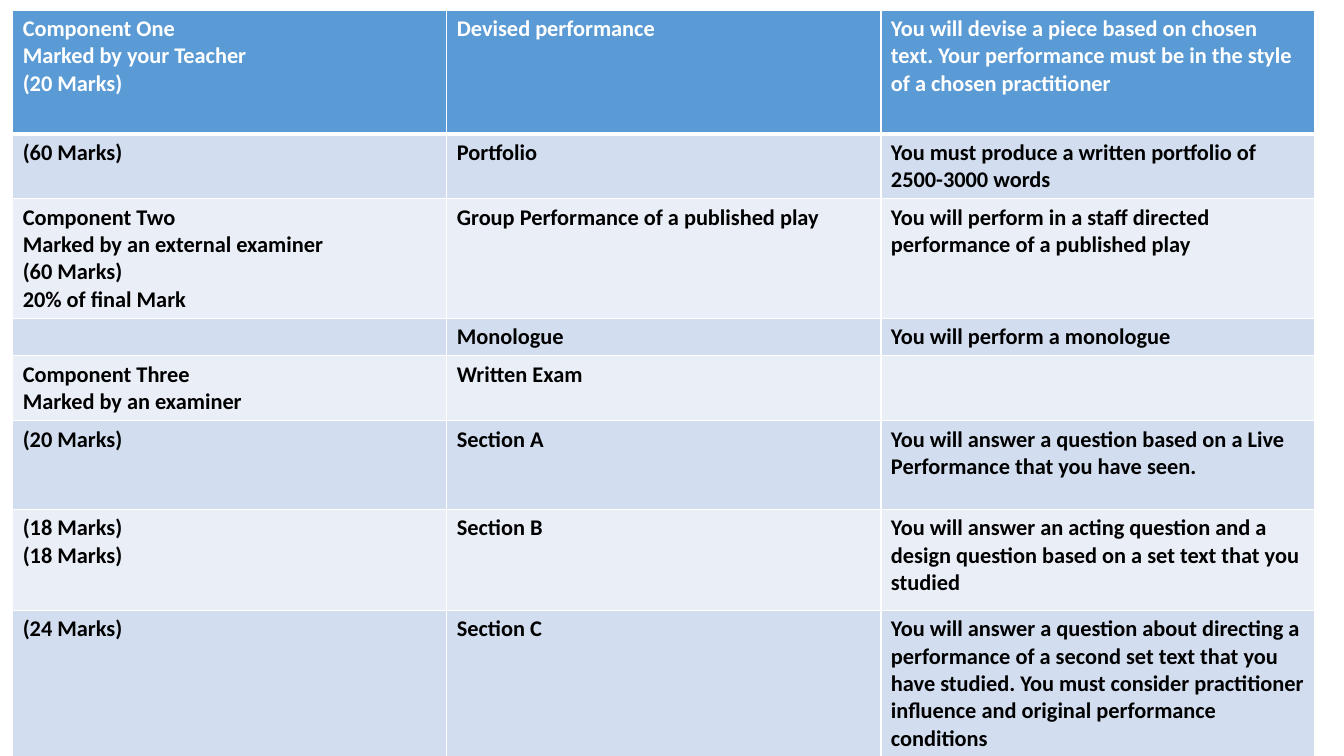
from lxml import etree
from pptx import Presentation
from pptx.dml.color import RGBColor
from pptx.oxml.ns import qn
from pptx.util import Cm, Pt

WHITE = RGBColor(0xFF, 0xFF, 0xFF)
BLACK = RGBColor(0, 0, 0)
HEADER_BLUE = RGBColor(0x5B, 0x9B, 0xD5)
DARK_BAND = RGBColor(0xD2, 0xDE, 0xEF)
LIGHT_BAND = RGBColor(0xEA, 0xEF, 0xF7)
TEXT_SIZE = Pt(16)
COLUMN_WIDTH = Cm(10.94)

COMPONENTS = [
    (3.12, "Component One\nMarked by your Teacher\n(20 Marks)",
     "Devised performance",
     "You will devise a piece based on chosen text. Your performance must be "
     "in the style of a chosen practitioner"),
    (1.57, "(60 Marks)", "Portfolio",
     "You must produce a written portfolio of 2500-3000 words"),
    (2.92, "Component Two\nMarked by an external examiner\n(60 Marks)\n"
     "20% of final Mark",
     "Group Performance of a published play",
     "You will perform in a staff directed performance of a published play"),
    (0.94, "", "Monologue", "You will perform a monologue"),
    (1.63, "Component Three\nMarked by an examiner", "Written Exam", ""),
    (2.24, "(20 Marks)", "Section A",
     "You will answer a question based on a Live Performance that you have seen."),
    (2.54, "(18 Marks)\n(18 Marks)", "Section B",
     "You will answer an acting question and a design question based on a set "
     "text that you studied"),
    (2.87, "(24 Marks)", "Section C",
     "You will answer a question about directing a performance of a second set "
     "text that you have studied. You must consider practitioner influence and "
     "original performance conditions"),
]


def add_borders(cell, bottom_width):
    properties = cell._tc.get_or_add_tcPr()
    widths = {"a:lnL": Pt(1), "a:lnR": Pt(1), "a:lnT": Pt(1), "a:lnB": bottom_width}
    for side, width in widths.items():
        border = etree.SubElement(properties, qn(side), w=str(int(width)))
        solid = etree.SubElement(border, qn("a:solidFill"))
        etree.SubElement(solid, qn("a:srgbClr"), val=str(WHITE))


def write_cell(cell, wording, colour):
    cell.text_frame.text = wording
    for paragraph in cell.text_frame.paragraphs:
        for run in paragraph.runs:
            run.font.name = "Calibri"
            run.font.size = TEXT_SIZE
            run.font.bold = True
            run.font.color.rgb = colour
        if not paragraph.runs:
            etree.SubElement(paragraph._p, qn("a:endParaRPr"),
                             sz=str(int(TEXT_SIZE.pt * 100)))


def fill_cell(cell, colour):
    cell.fill.solid()
    cell.fill.fore_color.rgb = colour


def add_components(slide):
    total_height = sum(height for height, *_ in COMPONENTS)
    components = slide.shapes.add_table(
        len(COMPONENTS), 3, Cm(0.32), Cm(0.25),
        COLUMN_WIDTH * 3, Cm(total_height)).table
    for column in components.columns:
        column.width = COLUMN_WIDTH
    for index, (height, *wordings) in enumerate(COMPONENTS):
        components.rows[index].height = Cm(height)
        is_header = index == 0
        band = HEADER_BLUE if is_header else DARK_BAND if index % 2 else LIGHT_BAND
        for cell, wording in zip(components.rows[index].cells, wordings):
            add_borders(cell, Pt(3) if is_header else Pt(1))
            fill_cell(cell, band)
            write_cell(cell, wording, WHITE if is_header else BLACK)


def main():
    deck = Presentation()
    deck.slide_width = Cm(33.87)
    deck.slide_height = Cm(19.05)
    slide = deck.slides.add_slide(deck.slide_layouts[6])
    add_components(slide)
    deck.save("out.pptx")


if __name__ == "__main__":
    main()
